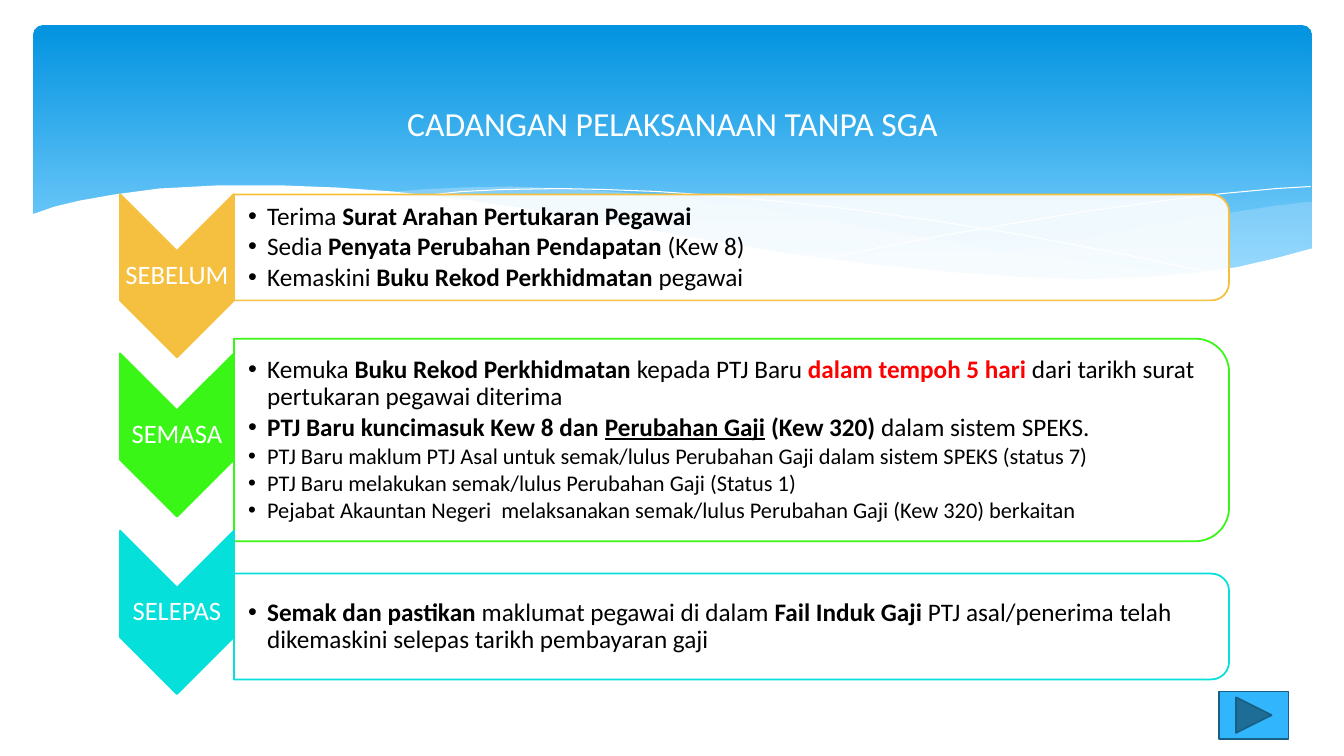
from dataclasses import dataclass

from lxml import etree
from pptx import Presentation
from pptx.dml.color import RGBColor
from pptx.enum.shapes import MSO_SHAPE
from pptx.enum.text import MSO_ANCHOR, PP_ALIGN
from pptx.oxml.ns import qn
from pptx.util import Inches, Pt

ROUND = MSO_SHAPE.ROUNDED_RECTANGLE
CARD = MSO_SHAPE.ROUND_2_SAME_RECTANGLE
ARROW = MSO_SHAPE.CHEVRON
NEXT = MSO_SHAPE.ACTION_BUTTON_FORWARD_OR_NEXT
MIDDLE = MSO_ANCHOR.MIDDLE
CENTER = PP_ALIGN.CENTER
LEFT = PP_ALIGN.LEFT
CELL = Inches(0.1)


@dataclass(frozen=True)
class Theme:
    font: str = "Calibri"
    white: str = "FFFFFF"
    ink: str = "000000"
    alert: str = "FF0000"
    sky: str = "0293E0"
    pale: str = "83D3FE"
    mist: str = "C6E7FC"
    button: str = "31B6FD"
    edge: str = "195F84"
    amber: str = "F5C040"
    green: str = "3AF617"
    aqua: str = "05E0DB"
    title: int = 24
    label: int = 19
    body: int = 18
    small: int = 16
    line: float = 1.25


class Board:
    def __init__(self, slide, theme):
        self.slide = slide
        self.theme = theme

    def cells(self, *sizes):
        return [round(size * CELL) for size in sizes]

    def paint(self, shape, fill=None, line=None, alpha=100, width=None):
        shape.shadow.inherit = False
        if fill:
            shape.fill.solid()
            shape.fill.fore_color.rgb = RGBColor.from_string(fill)
            if alpha < 100:
                color = shape._element.spPr.find(qn("a:solidFill"))[0]
                etree.SubElement(color, qn("a:alpha"), val=str(alpha * 1000))
        else:
            shape.fill.background()
        if line:
            shape.line.color.rgb = RGBColor.from_string(line)
            shape.line.width = Pt(self.theme.line if width is None else width)
        else:
            shape.line.fill.background()

    def box(self, kind, col, row, wide, high, **look):
        shape = self.slide.shapes.add_shape(kind, *self.cells(col, row, wide, high))
        self.paint(shape, **look)
        return shape

    def turned(self, kind, col, row, wide, high, **look):
        shift = (wide - high) / 2
        shape = self.box(kind, col + shift, row - shift, high, wide, **look)
        shape.rotation = 90

    def banner(self, col, row, wide, high):
        shape = self.box(ROUND, col, row, wide, high)
        shape.adjustments[0] = 0.034
        shape.fill.gradient()
        shape.fill.gradient_angle = 270
        stops = zip(shape.fill.gradient_stops, (self.theme.sky, self.theme.pale), (0, 0.9))
        for stop, color, place in stops:
            stop.color.rgb = RGBColor.from_string(color)
            stop.position = place

    def wave(self, points, close=True, **look):
        spots = [self.cells(*point) for point in points]
        draft = self.slide.shapes.build_freeform(*spots[0])
        draft.add_line_segments(spots[1:], close=close)
        self.paint(draft.convert_to_shape(), **look)

    def text(self, col, row, wide, high, lines, color, align=LEFT, pad=0.1, bullet=False):
        frame = self.slide.shapes.add_textbox(*self.cells(col, row, wide, high)).text_frame
        frame.word_wrap = True
        frame.vertical_anchor = MIDDLE
        frame.margin_left = round(pad * CELL)
        frame.margin_right = frame.margin_top = frame.margin_bottom = round(0.1 * CELL)
        for index, (size, runs) in enumerate(lines):
            para = frame.paragraphs[0] if index == 0 else frame.add_paragraph()
            para.alignment = align
            para.line_spacing = 0.9
            if bullet:
                para.space_after = Pt(size * 0.13)
                props = para._p.get_or_add_pPr()
                props.set("marL", str(round(1.9 * CELL)))
                props.set("indent", str(round(-1.9 * CELL)))
                etree.SubElement(props, qn("a:buFont"), typeface="Arial")
                etree.SubElement(props, qn("a:buChar"), char="•")
            para.font.name = self.theme.font
            para.font.size = Pt(size)
            para.font.color.rgb = RGBColor.from_string(color)
            for words, marks in runs:
                run = para.add_run()
                run.text = words
                if "b" in marks:
                    run.font.bold = True
                if "u" in marks:
                    run.font.underline = True
                if "r" in marks:
                    run.font.color.rgb = RGBColor.from_string(self.theme.alert)

    def stage(self, name, color, tip, top, high, lines):
        look = self.theme
        self.turned(ARROW, 11.9, tip, 11.3, 16.2, fill=color, line=color)
        self.text(11.9, tip + 5.7, 11.3, 4.8, [(look.label, [(name, "")])], look.white, CENTER)
        self.turned(CARD, 23.2, top, 98.7, high, fill=look.white, line=color, alpha=90)
        self.text(23.2, top, 97.7, high, lines, look.ink, pad=1.4, bullet=True)


RIGHT = [
    (130.1, 20), (126.5, 20.4), (122.7, 21), (118.8, 21.6), (114.7, 22.3), (107.3, 23.7),
    (100.5, 24.8), (94.1, 25.7), (88.2, 26.5), (92.1, 26.9), (95.8, 27.2), (100.9, 27.6),
    (105.6, 27.7), (111.3, 27.7), (116.3, 27.4), (120.7, 26.9), (124.7, 26.2), (130.1, 24.7),
]
MID = [
    (119, 27.3), (111.6, 26.5), (103.4, 25.4), (94.1, 24), (83.9, 22.2), (77.8, 21.1),
    (72.1, 20.3), (66.9, 19.6), (61.9, 19.1), (56, 18.7), (50.6, 18.5), (45.9, 18.6),
    (41.8, 18.8), (38.2, 19.1), (43.1, 19.6), (48.3, 20.3), (53.9, 21.1), (59.9, 22.2),
    (70.6, 24), (80.2, 25.5), (88.7, 26.6), (96.3, 27.4), (103, 27.7), (109, 27.8),
    (114.3, 27.7),
]
FALL = [
    (41.2, 19.5), (45.8, 19), (49.9, 18.8), (55.5, 18.7), (60, 18.8), (65.2, 19),
    (71, 19.4), (77.5, 20), (84.8, 20.8), (92.7, 21.9), (101.4, 23.3), (110.8, 25.1),
    (121, 27.2),
]
RISE = [
    (81.8, 25.7), (87, 24.6), (92.7, 23.5), (99.7, 22.3), (107.5, 21), (115.5, 19.9),
    (121.3, 19.2), (126.7, 18.7), (130, 18.5),
]
BASE = [
    (130.3, 24.6), (126.6, 25.6), (122.7, 26.5), (118.3, 27.1), (113.4, 27.5), (107.8, 27.7),
    (101.5, 27.5), (94.4, 27), (86.3, 26.2), (77.2, 25), (67.1, 23.3), (59.6, 22),
    (52.1, 20.7), (45.3, 19.7), (39, 19), (33.3, 18.6), (28.2, 18.4), (21.4, 18.4),
    (15.8, 18.7), (11.3, 19.3), (7.9, 19.9), (5.4, 20.5), (3.1, 21.3), (3.1, 32.9),
    (130.3, 32.9),
]


def main():
    deck = Presentation()
    deck.slide_width = Inches(13.33)
    deck.slide_height = Inches(7.5)
    look = Theme()
    board = Board(deck.slides.add_slide(deck.slide_layouts[6]), look)

    board.banner(3.3, 2.5, 126.8, 27)
    board.wave(RIGHT, fill=look.mist, alpha=29)
    board.wave(MID, fill=look.mist, alpha=40)
    for curve in (FALL, RISE):
        board.wave(curve, close=False, line=look.white, width=0)
    board.wave(BASE, fill=look.white)

    before = [
        (look.body, [("Terima ", ""), ("Surat Arahan Pertukaran Pegawai", "b")]),
        (look.body, [("Sedia ", ""), ("Penyata Perubahan Pendapatan ", "b"), ("(Kew 8)", "")]),
        (look.body, [("Kemaskini ", ""), ("Buku Rekod Perkhidmatan ", "b"), ("pegawai", "")]),
    ]
    during = [
        (look.body, [("Kemuka ", ""), ("Buku Rekod Perkhidmatan ", "b"),
                     ("kepada PTJ Baru ", ""), ("dalam tempoh 5 hari ", "br"),
                     ("dari tarikh surat pertukaran pegawai diterima", "")]),
        (look.body, [("PTJ Baru kuncimasuk Kew 8 dan ", "b"), ("Perubahan Gaji", "bu"),
                     (" (Kew 320) ", "b"), ("dalam sistem SPEKS.", "")]),
        (look.small, [("PTJ Baru maklum PTJ Asal untuk semak/lulus Perubahan Gaji "
                       "dalam sistem SPEKS (status 7)", "")]),
        (look.small, [("PTJ Baru melakukan semak/lulus Perubahan Gaji (Status 1)", "")]),
        (look.small, [("Pejabat Akauntan Negeri  melaksanakan semak/lulus Perubahan Gaji "
                       "(Kew 320) berkaitan", "")]),
    ]
    after = [
        (look.body, [("Semak dan pastikan ", "b"), ("maklumat pegawai di dalam ", ""),
                     ("Fail Induk Gaji", "b"),
                     (" PTJ asal/penerima telah dikemaskini selepas tarikh "
                      "pembayaran gaji", "")]),
    ]
    board.stage("SEBELUM", look.amber, 19.25, 19.3, 10.5, before)
    board.stage("SEMASA", look.green, 35.05, 33.6, 20.1, during)
    board.stage("SELEPAS", look.aqua, 52.65, 56.9, 10.5, after)

    title = [(look.title, [("CADANGAN PELAKSANAAN TANPA SGA", "")])]
    board.text(11.7, 9.8, 110, 5.3, title, look.white, CENTER)
    board.box(NEXT, 120.9, 68.6, 6.9, 4.7, fill=look.button, line=look.edge)
    deck.save("out.pptx")


if __name__ == "__main__":
    main()
